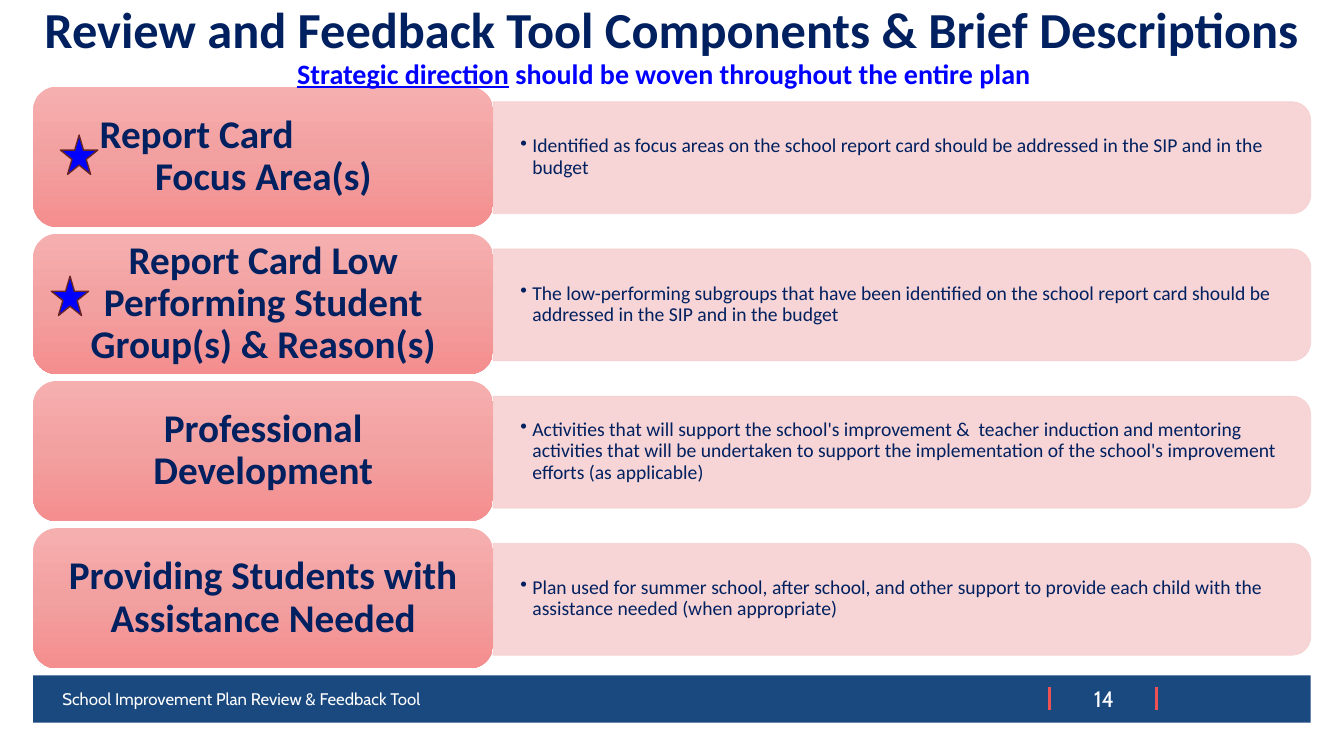
from copy import deepcopy

from lxml import etree
from pptx import Presentation
from pptx.dml.color import RGBColor
from pptx.enum.shapes import MSO_CONNECTOR, MSO_SHAPE
from pptx.enum.text import MSO_ANCHOR, PP_ALIGN
from pptx.oxml.ns import qn
from pptx.util import Pt

PX = 9144
RECT = MSO_SHAPE.RECTANGLE
ROUNDED = MSO_SHAPE.ROUNDED_RECTANGLE
ROUND_TOP = MSO_SHAPE.ROUND_2_SAME_RECTANGLE
STAR = MSO_SHAPE.STAR_5_POINT
STRAIGHT = MSO_CONNECTOR.STRAIGHT
TOP, MIDDLE = MSO_ANCHOR.TOP, MSO_ANCHOR.MIDDLE
LEFT, CENTER = PP_ALIGN.LEFT, PP_ALIGN.CENTER

COLORS = {
    "navy": "002060", "blue": "0000FF", "white": "FFFFFF", "footer": "1A497F",
    "divider": "EC5153", "panel": "F7D0D1", "star_edge": "672424",
    "card_top": "F6AFAF", "card_mid": "F3A0A0", "card_bottom": "F58E8F",
}
CARD_STOPS = [(0, "card_top"), (0.5, "card_mid"), (1, "card_bottom")]

STYLES = {
    "title": {"name": "Calibri", "size": Pt(36), "bold": True, "color": "navy"},
    "subtitle": {"name": "Calibri", "size": Pt(20), "bold": True, "color": "blue"},
    "heading": {"name": "Calibri", "size": Pt(28), "bold": True, "color": "navy"},
    "detail": {"name": "Calibri", "size": Pt(14), "color": "navy"},
    "footer": {"name": "Cabin", "size": Pt(12), "color": "white"},
    "page": {"name": "Cabin", "size": Pt(16), "color": "white"},
}

COMPONENTS = [
    {"heading": "Report Card\vFocus Area(s)", "hanging": (102, -55), "star": (27, 48),
     "detail": "Identified as focus areas on the school report card should be "
               "addressed in the SIP and in the budget"},
    {"heading": "Report Card Low Performing Student Group(s) & Reason(s)", "star": (18, 42),
     "detail": "The low-performing subgroups that have been identified on the school "
               "report card should be addressed in the SIP and in the budget"},
    {"heading": "Professional Development",
     "detail": "Activities that will support the school's improvement &  teacher induction "
               "and mentoring activities that will be undertaken to support the "
               "implementation of the school's improvement efforts (as applicable)"},
    {"heading": "Providing Students with Assistance Needed",
     "detail": "Plan used for summer school, after school, and other support to provide "
               "each child with the assistance needed (when appropriate)"},
]
ROW_PITCH = 146


def rgb(color):
    return RGBColor.from_string(COLORS[color])


def emu(*lengths):
    return [length * PX for length in lengths]


def write(frame, runs, style, align=LEFT, anchor=MIDDLE, insets=(10, 5),
          spacing=None, hanging=None, bullet=None):
    side, edge = emu(*insets)
    frame_format = {"word_wrap": True, "vertical_anchor": anchor, "margin_left": side,
                    "margin_right": side, "margin_top": edge, "margin_bottom": edge}
    for name, value in frame_format.items():
        setattr(frame, name, value)
    paragraph = frame.paragraphs[0]
    properties = paragraph._p.get_or_add_pPr()
    if hanging:
        for name, value in zip(("marL", "indent"), emu(*hanging)):
            properties.set(name, str(value))
    if bullet:
        etree.SubElement(properties, qn("a:buChar"), char=bullet)
    paragraph.alignment = align
    if spacing:
        paragraph.line_spacing = spacing
    for index, (words, changes) in enumerate(runs):
        if index == 0 and "\v" in words:
            first, words = words.split("\v")
            add_run(paragraph, first, style, changes)
            paragraph.add_line_break()
        add_run(paragraph, words, style, changes)


def add_run(paragraph, words, style, changes):
    run = paragraph.add_run()
    run.text = words
    for name, value in {**STYLES[style], **changes}.items():
        if name == "color":
            run.font.color.rgb = rgb(value)
        else:
            setattr(run.font, name, value)


def add_text(slide, box, runs, style, **layout):
    write(slide.shapes.add_textbox(*emu(*box)).text_frame, runs, style, **layout)


def add_plain(slide, kind, box, fill=None, edge=None, width=1):
    shape = slide.shapes.add_shape(kind, *emu(*box))
    shape.shadow.inherit = False
    if fill:
        shape.fill.solid()
        shape.fill.fore_color.rgb = rgb(fill)
    if edge:
        shape.line.color.rgb = rgb(edge)
        shape.line.width = Pt(width)
    else:
        shape.line.fill.background()
    return shape


def add_header(slide, left, top, width):
    add_text(slide, (left, top, width, 77),
             [("Review and Feedback Tool Components & Brief Descriptions", {})],
             "title", align=CENTER, anchor=TOP, insets=(0, 5), spacing=0.9)
    add_text(slide, (left - 8, top + 43, width, 55),
             [("Strategic direction", {"underline": True}), (" ", {"bold": False}),
              ("should be woven throughout the entire plan", {})],
             "subtitle", align=CENTER, anchor=TOP, spacing=1.23)


def add_panel(slide, left, top, width, height, detail):
    turned_left = left + (width - height) // 2
    turned_top = top - (width - height) // 2
    panel = add_plain(slide, ROUND_TOP, (turned_left, turned_top, height, width),
                      "panel", "panel", 0.5)
    panel.rotation = 90
    for color in panel._element.spPr.iter(qn("a:srgbClr")):
        etree.SubElement(color, qn("a:alpha"), val="90000")
    add_text(slide, (left, top + 5, width - 6, height - 11), [(detail, {})], "detail",
             insets=(27, 14), spacing=0.9, hanging=(12, -12), bullet="•")


def add_card(slide, box, heading, hanging):
    card = add_plain(slide, ROUNDED, box)
    card.fill.gradient()
    card.fill.gradient_angle = 270
    first_stop = card._element.spPr.find(".//" + qn("a:gs"))
    first_stop.addnext(deepcopy(first_stop))
    for stop, (position, color) in zip(card.fill.gradient_stops, CARD_STOPS):
        stop.position = position
        stop.color.rgb = rgb(color)
    write(card.text_frame, [(heading, {})], "heading", align=LEFT if hanging else CENTER,
          insets=(12, 6), spacing=0.9, hanging=hanging)


def add_component(slide, left, top, width, component):
    card_width = 456
    add_panel(slide, left + card_width, top + 15, width - card_width, 111,
              component["detail"])
    add_card(slide, (left, top, card_width, 139), component["heading"],
             component.get("hanging"))
    if "star" in component:
        across, down = component["star"]
        add_plain(slide, STAR, (left + across, top + down, 37, 39), "blue", "star_edge")


def add_footer(slide, left, top, width, height):
    add_plain(slide, RECT, (left, top, width, height), "footer")
    for across in (1008, 1114):
        x = left + across
        divider = slide.shapes.add_connector(STRAIGHT, *emu(x, top + 12, x, top + 34))
        divider.line.color.rgb = rgb("divider")
        divider.line.width = Pt(2.25)
        etree.SubElement(divider._element.spPr, qn("a:effectLst"))
    add_text(slide, (left + 1030, top + 5, 64, 37), [("14", {})], "page", align=CENTER)
    add_text(slide, (left + 19, top + 3, 847, 40),
             [("School Improvement Plan Review & Feedback Tool", {})], "footer")


def main():
    deck = Presentation()
    deck.slide_width, deck.slide_height = emu(1333, 750)
    slide = deck.slides.add_slide(deck.slide_layouts[6])
    left, width = 33, 1267
    add_footer(slide, left, 670, width, 47)
    for row, component in enumerate(COMPONENTS):
        add_component(slide, left, 86 + row * ROW_PITCH, width, component)
    add_header(slide, left, 0, width)
    deck.save("out.pptx")


if __name__ == "__main__":
    main()
